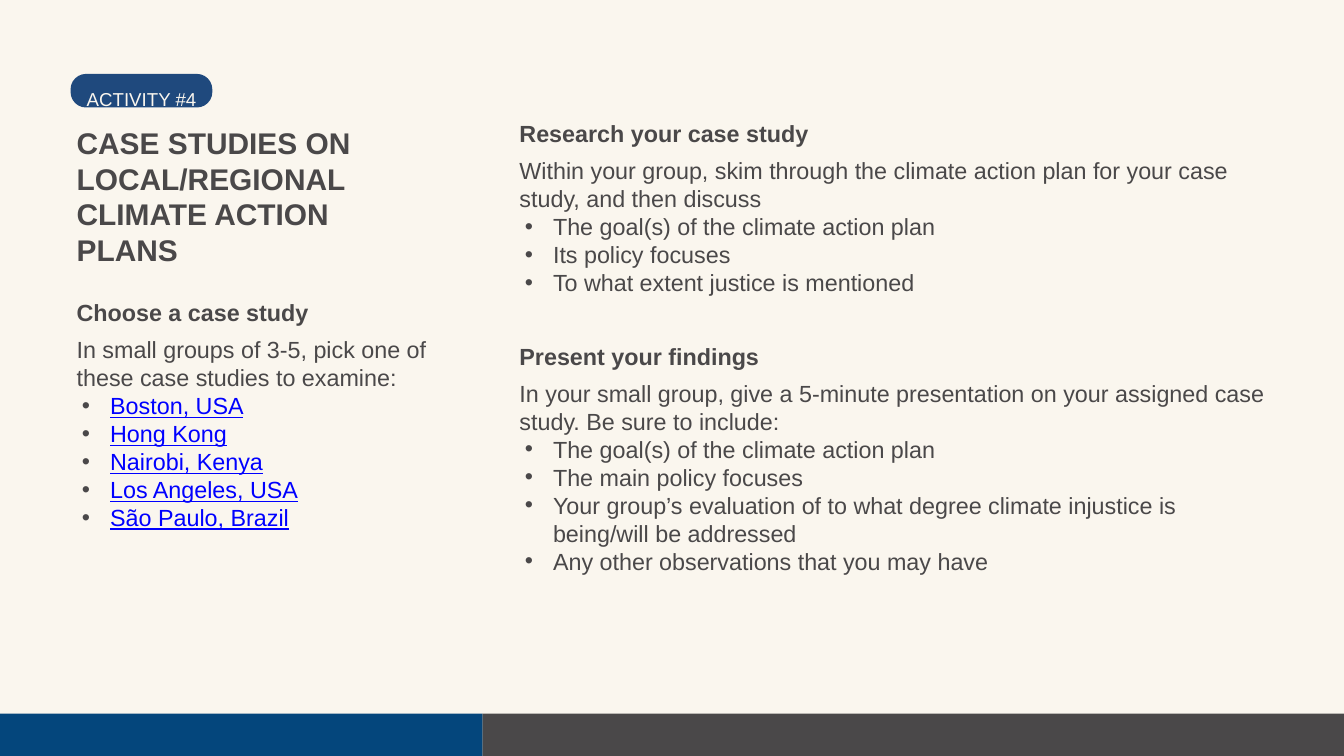
from lxml import etree
from pptx import Presentation
from pptx import util as u
from pptx.dml.color import RGBColor
from pptx.enum import shapes, text
from pptx.oxml import ns

COLORS = {"cream": "FAF6EE", "gray": "4A4849", "blue": "04467C", "navy": "1F497D", "link": "0000FF"}

deck = Presentation()
deck.slide_width, deck.slide_height = u.Inches(20), u.Inches(11.25)
column = deck.slide_width / 20
row = deck.slide_height / 11.25
page = deck.slides.add_slide(deck.slide_layouts[6])
page.background.fill.solid()
page.background.fill.fore_color.rgb = RGBColor.from_string(COLORS["cream"])


def add_block(kind, left, top, width, height, color):
    block = page.shapes.add_shape(kind, int(left * column), int(top * row), int(width * column), int(height * row))
    block.shadow.inherit = False
    block.fill.solid()
    block.fill.fore_color.rgb = RGBColor.from_string(COLORS[color])
    block.line.fill.background()
    return block


def add_text(left, top, width, height, lines, size, color="gray", bold=False, spacing=None, item_color="gray"):
    box = page.shapes.add_textbox(int(left * column), int(top * row), int(width * column), int(height * row))
    frame = box.text_frame
    frame.word_wrap = True
    frame.auto_size = text.MSO_AUTO_SIZE.SHAPE_TO_FIT_TEXT
    frame.margin_left = frame.margin_top = frame.margin_right = frame.margin_bottom = 0
    for index, line in enumerate(lines):
        para = frame.paragraphs[0] if index == 0 else frame.add_paragraph()
        para.add_run().text = line
        if index:
            para.level = 1
            properties = para._p.get_or_add_pPr()
            properties.set("marL", str(int(0.5 * column)))
            properties.set("indent", str(int(-0.42 * column)))
            bullet_color = etree.SubElement(properties, ns.qn("a:buClr"))
            etree.SubElement(bullet_color, ns.qn("a:srgbClr"), val=COLORS["gray"])
            etree.SubElement(properties, ns.qn("a:buFont"), typeface="Arial")
            etree.SubElement(properties, ns.qn("a:buChar"), char="•")
        para.line_spacing = spacing or u.Pt(size * 1.2)
        para.font.name = "Arial"
        para.font.size = u.Pt(size)
        para.font.bold = bold
        shade = item_color if index else color
        para.font.underline = shade == "link"
        para.font.color.rgb = RGBColor.from_string(COLORS[shade])


footer_split, footer_top, footer_height = 7.18, 10.62, 0.63
add_block(shapes.MSO_SHAPE.RECTANGLE, footer_split, footer_top, 14.18, footer_height, "gray")
add_block(shapes.MSO_SHAPE.RECTANGLE, -0.59, footer_top, 7.77, footer_height, "blue")

left_edge, right_edge = 1.14, 7.73
add_text(left_edge, 1.85, 4.65, 2.15, ["CASE STUDIES ON LOCAL/REGIONAL CLIMATE ACTION PLANS"], 32, bold=True)

sections = [
    (left_edge, 4.44, 5.66, 7, "link", "Choose a case study", [
        "In small groups of 3-5, pick one of these case studies to examine:",
        "Boston, USA",
        "Hong Kong",
        "Nairobi, Kenya",
        "Los Angeles, USA",
        "São Paulo, Brazil",
    ]),
    (right_edge, 1.78, 11.15, 5, "gray", "Research your case study", [
        "Within your group, skim through the climate action plan for your case study, and then discuss",
        "The goal(s) of the climate action plan",
        "Its policy focuses",
        "To what extent justice is mentioned",
    ]),
    (right_edge, 5.09, 11.15, 7, "gray", "Present your findings", [
        "In your small group, give a 5-minute presentation on your assigned case study. Be sure to include:",
        "The goal(s) of the climate action plan",
        "The main policy focuses",
        "Your group’s evaluation of to what degree climate injustice is being/will be addressed",
        "Any other observations that you may have",
    ]),
]
line_height, body_offset = 0.42, 0.55
for left, top, width, line_count, item_color, heading, body in sections:
    add_text(left, top + body_offset, width, line_count * line_height, body, 25, item_color=item_color)
    add_text(left, top, width, line_height, [heading], 25, bold=True)

badge = add_block(shapes.MSO_SHAPE.ROUNDED_RECTANGLE, 1.05, 1.1, 2.11, 0.5, "navy")
badge.adjustments[0] = 0.46
add_text(1.29, 1.18, 9.33, 0.34, ["ACTIVITY #4"], 20, color="cream", spacing=1.4)

deck.save("out.pptx")
